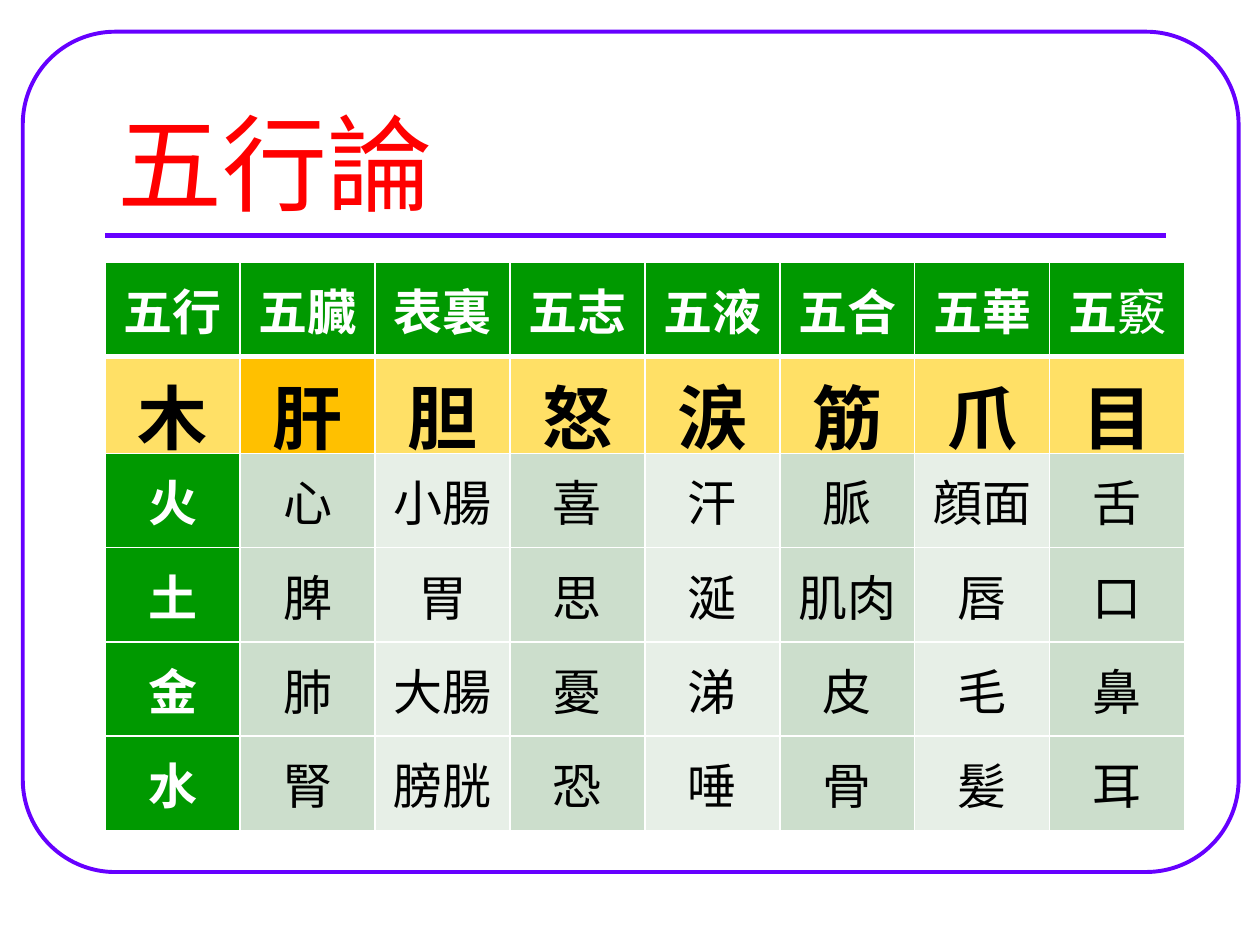
"""Build a slide with a table of the five phases (五行論)."""
from lxml.etree import SubElement
from pptx import Presentation
from pptx.dml.color import RGBColor
from pptx.enum.shapes import MSO_CONNECTOR, MSO_SHAPE
from pptx.enum.text import MSO_ANCHOR, PP_ALIGN
from pptx.oxml.ns import qn
from pptx.util import Cm, Pt


def rgb(code):
    return RGBColor.from_string(code)


def add_border(cell, side, width):
    ln = SubElement(cell._tc.get_or_add_tcPr(), qn(f"a:{side}"), w=str(Pt(width)))
    SubElement(SubElement(ln, qn("a:solidFill")), qn("a:srgbClr"), val="FFFFFF")


PURPLE, GREEN, WHITE, BLACK = "6600FF", "009900", "FFFFFF", "000000"
ROWS = [
    "五行 五臓 表裏 五志 五液 五合 五華 五竅".split(),
    "木 肝 胆 怒 涙 筋 爪 目".split(),
    "火 心 小腸 喜 汗 脈 顔面 舌".split(),
    "土 脾 胃 思 涎 肌肉 唇 口".split(),
    "金 肺 大腸 憂 涕 皮 毛 鼻".split(),
    "水 腎 膀胱 恐 唾 骨 髪 耳".split(),
]

prs = Presentation()
prs.slide_width, prs.slide_height = Cm(25.4), Cm(19.05)
s = prs.slides.add_slide(prs.slide_layouts[6])

frame = s.shapes.add_shape(MSO_SHAPE.ROUNDED_RECTANGLE, Cm(0.46), Cm(0.64), Cm(24.51), Cm(16.94))
frame.adjustments[0] = 0.11
frame.shadow.inherit = False
frame.fill.background()
frame.line.color.rgb = rgb(PURPLE)
frame.line.width = Pt(2.25)

rule = s.shapes.add_connector(MSO_CONNECTOR.STRAIGHT, Cm(2.12), Cm(4.75), Cm(23.5), Cm(4.75))
rule.line.color.rgb = rgb(PURPLE)
rule.line.width = Pt(3)
SubElement(rule._element.spPr, qn("a:effectLst"))

title = s.shapes.add_textbox(Cm(2.12), Cm(1.47), Cm(21.39), Cm(3.18))
tf = title.text_frame
tf.word_wrap = True
tf.vertical_anchor = MSO_ANCHOR.BOTTOM
p = tf.paragraphs[0]
p.text = "五行論"
p.font.name = "Montserrat"
p.font.size = Pt(60)
p.font.color.rgb = rgb("FF0000")

table = s.shapes.add_table(len(ROWS), len(ROWS[0]), Cm(2.12), Cm(5.29), Cm(21.8), Cm(11.43)).table
for col in table.columns:
    col.width = Cm(2.72)
for row in table.rows:
    row.height = Cm(1.9)

for i, row in enumerate(ROWS):
    for j, text in enumerate(row):
        cell = table.cell(i, j)
        for side in ("lnL", "lnR", "lnT", "lnB"):
            thick = (i, side) in ((0, "lnB"), (1, "lnT"))
            add_border(cell, side, 3 if thick else 1)
        if i == 1:
            fill, color = "FFC000" if j == 1 else "FFE066", BLACK
        elif i == 0 or j == 0:
            fill, color = GREEN, WHITE
        else:
            fill, color = "CCDECC" if j % 2 else "E7EFE7", BLACK
        cell.fill.solid()
        cell.fill.fore_color.rgb = rgb(fill)
        cell.vertical_anchor = MSO_ANCHOR.MIDDLE
        p = cell.text_frame.paragraphs[0]
        p.alignment = PP_ALIGN.CENTER
        p.font.name = "Arial"
        p.font.size = Pt(40 if i == 1 else 28)
        p.font.color.rgb = rgb(color)
        bold = i < 2 or j == 0
        for part in text if text == "五竅" else [text]:
            r = p.add_run()
            r.text = part
            r.font.name = "Arial"
            r.font.size = p.font.size
            r.font.color.rgb = rgb(color)
            r.font.bold = bold and part != "竅"

prs.save("out.pptx")
